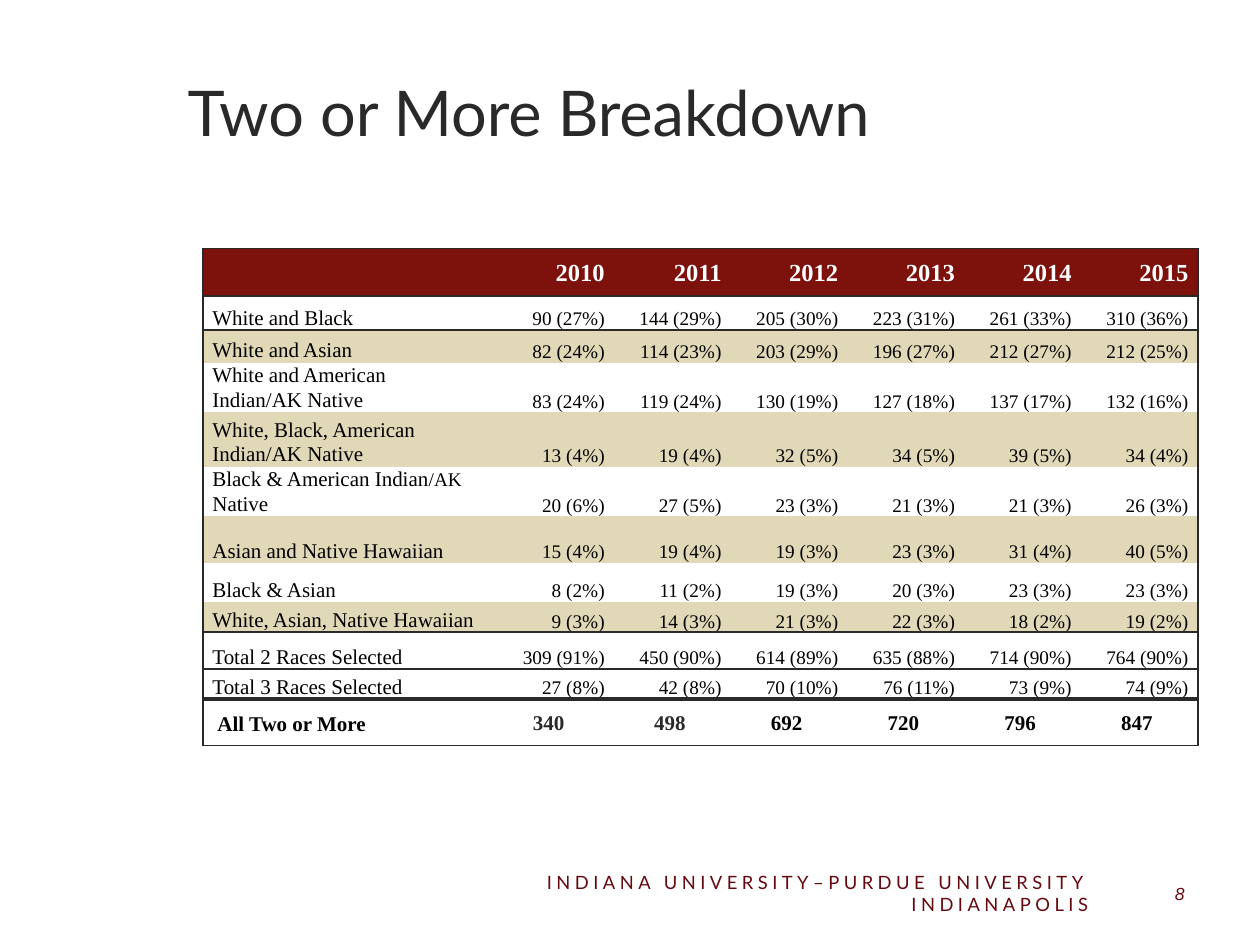
from lxml.etree import SubElement
from pptx import Presentation
from pptx.dml.color import RGBColor
from pptx.enum.text import MSO_ANCHOR, PP_ALIGN
from pptx.oxml.ns import qn
from pptx.util import Pt

COLORS = {"ink": "292929", "crimson": "7D110C", "footer": "66080F",
          "sand": "E1D8B7", "black": "000000", "white": "FFFFFF"}
SERIF = "Times New Roman"
NO_GRID_STYLE = "{2D5ABB26-0587-4C30-8999-92F81FD0307C}"

YEARS = ["", "2010", "2011", "2012", "2013", "2014", "2015"]
BREAKDOWN = [
    ["White and Black", "90 (27%)", "144 (29%)", "205 (30%)", "223 (31%)", "261 (33%)", "310 (36%)"],
    ["White and Asian", "82 (24%)", "114 (23%)", "203 (29%)", "196 (27%)", "212 (27%)", "212 (25%)"],
    ["White and American Indian/AK Native",
     "83 (24%)", "119 (24%)", "130 (19%)", "127 (18%)", "137 (17%)", "132 (16%)"],
    ["White, Black, American Indian/AK Native",
     "13 (4%)", "19 (4%)", "32 (5%)", "34 (5%)", "39 (5%)", "34 (4%)"],
    ["Black & American Indian|/AK |Native",
     "20 (6%)", "27 (5%)", "23 (3%)", "21 (3%)", "21 (3%)", "26 (3%)"],
    ["Asian and Native Hawaiian", "15 (4%)", "19 (4%)", "19 (3%)", "23 (3%)", "31 (4%)", "40 (5%)"],
    ["Black & Asian", "8 (2%)", "11 (2%)", "19 (3%)", "20 (3%)", "23 (3%)", "23 (3%)"],
    ["White, Asian, Native Hawaiian", "9 (3%)", "14 (3%)", "21 (3%)", "22 (3%)", "18 (2%)", "19 (2%)"],
    ["Total 2 Races Selected",
     "309 (91%)", "450 (90%)", "614 (89%)", "635 (88%)", "714 (90%)", "764 (90%)"],
    ["Total 3 Races Selected", "27 (8%)", "42 (8%)", "70 (10%)", "76 (11%)", "73 (9%)", "74 (9%)"],
]
TOTALS = ["All Two or More", "340 ", "498 ", "692 ", "720 ", "796 ", "847 "]
COLUMN_WIDTHS = [163, 72] + [66.7] * 5
ROW_HEIGHTS = [27.2, 19.4, 18.6, 17.3, 31, 22.3, 26.6, 22.3, 17.3, 20.9, 17.3, 26.6]
# Rules under rows, by row number; row -1 is the top edge of the table
RULES = {-1: 1, 0: 1, 8: 1, 10: 2.25, 11: 1}


def write(frame, text, size=12, font=SERIF, color="black", bold=False, italic=False,
          align=PP_ALIGN.LEFT, spacing=None, tracking=None, small=11):
    """Fill a frame; every second part between bars takes the small size."""
    para = frame.paragraphs[0]
    para.alignment = align
    if spacing:
        para.line_spacing = spacing
    for index, part in enumerate(text.split("|")):
        span = para.add_run()
        span.text = part
        span.font.size = Pt(small if index % 2 else size)
        span.font.name = font
        span.font.bold = bold
        span.font.italic = italic
        span.font.color.rgb = RGBColor.from_string(COLORS[color])
        if tracking:
            span.font._element.set("spc", str(tracking))
    return para


def add_border(cell, side, width):
    line = SubElement(cell._tc.get_or_add_tcPr(), qn(f"a:ln{side}"), w=str(Pt(width)))
    fill = SubElement(line, qn("a:solidFill"))
    SubElement(fill, qn("a:srgbClr"), val=COLORS["ink"])


deck = Presentation()
deck.slide_width, deck.slide_height = Pt(720), Pt(540)
page = deck.slides.add_slide(deck.slide_layouts[5])

# Title with a soft shadow on its letters
title = page.shapes.title
title.left, title.top, title.width, title.height = Pt(100), Pt(21.6), Pt(584), Pt(84)
title.text_frame.vertical_anchor = MSO_ANCHOR.MIDDLE
para = write(title.text_frame, "Two or More Breakdown", size=36, font="Lato", color="ink")
effects = para.runs[0].font._element
effect_list = effects.makeelement(qn("a:effectLst"), {})
effects.find(qn("a:solidFill")).addnext(effect_list)
shadow = SubElement(effect_list, qn("a:outerShdw"), blurRad=str(Pt(3)),
                    dist=str(Pt(3)), dir="5400000", algn="tl")
shade = SubElement(shadow, qn("a:srgbClr"), val=COLORS["black"])
SubElement(shade, qn("a:alpha"), val="40000")

# Table grid
table = page.shapes.add_table(len(ROW_HEIGHTS), len(COLUMN_WIDTHS), Pt(116), Pt(142),
                              Pt(sum(COLUMN_WIDTHS)), Pt(sum(ROW_HEIGHTS))).table
table.horz_banding = False
table.first_row = False
table._tbl.tblPr.find(qn("a:tableStyleId")).text = NO_GRID_STYLE
for column, width in zip(table.columns, COLUMN_WIDTHS):
    column.width = Pt(width)
for row, height in zip(table.rows, ROW_HEIGHTS):
    row.height = Pt(height)

# Table cells
last_row, last_column = len(ROW_HEIGHTS) - 1, len(COLUMN_WIDTHS) - 1
for row_number, values in enumerate([YEARS, *BREAKDOWN, TOTALS]):
    is_header, is_total = row_number == 0, row_number == last_row
    for column_number, value in enumerate(values):
        cell = table.cell(row_number, column_number)
        is_label = column_number == 0
        cell.margin_left = cell.margin_right = Pt(5.4)
        cell.margin_top = cell.margin_bottom = 0
        cell.vertical_anchor = MSO_ANCHOR.MIDDLE if is_header or is_total else MSO_ANCHOR.BOTTOM

        if is_label:
            add_border(cell, "L", 1)
        if column_number == last_column:
            add_border(cell, "R", 1)
        for side, rule in (("T", row_number - 1), ("B", row_number)):
            if rule in RULES:
                add_border(cell, side, RULES[rule])

        if is_header or row_number in (2, 4, 6, 8):
            cell.fill.solid()
            cell.fill.fore_color.rgb = RGBColor.from_string(COLORS["crimson" if is_header else "sand"])
        else:
            cell.fill.background()

        if is_header:
            look = dict(size=14, color="white", bold=True, align=PP_ALIGN.RIGHT, spacing=Pt(16))
        elif is_total and is_label:
            look = dict(bold=True, spacing=Pt(16))
        elif is_total:
            look = dict(bold=True, align=PP_ALIGN.CENTER, spacing=1.07,
                        color="ink" if column_number < 3 else "black")
        elif is_label:
            look = dict(spacing=1.07)
        else:
            look = dict(size=11, align=PP_ALIGN.RIGHT, spacing=1.07)
        if value:
            para = write(cell.text_frame, value, **look)
            if is_total and is_label:
                para._p.get_or_add_pPr().set("marL", str(Pt(2.9)))

# Footer and page number
for left, width, text, look in (
    (291, 338, "INDIANA UNIVERSITY–PURDUE UNIVERSITY INDIANAPOLIS",
     dict(size=10.5, font="Lato", tracking=260)),
    (619, 65, "8", dict(size=10, font="Arial", italic=True)),
):
    box = page.shapes.add_textbox(Pt(left), Pt(496), Pt(width), Pt(28.8))
    box.text_frame.word_wrap = True
    box.text_frame.vertical_anchor = MSO_ANCHOR.MIDDLE
    write(box.text_frame, text, color="footer", align=PP_ALIGN.RIGHT, **look)

deck.save("out.pptx")
